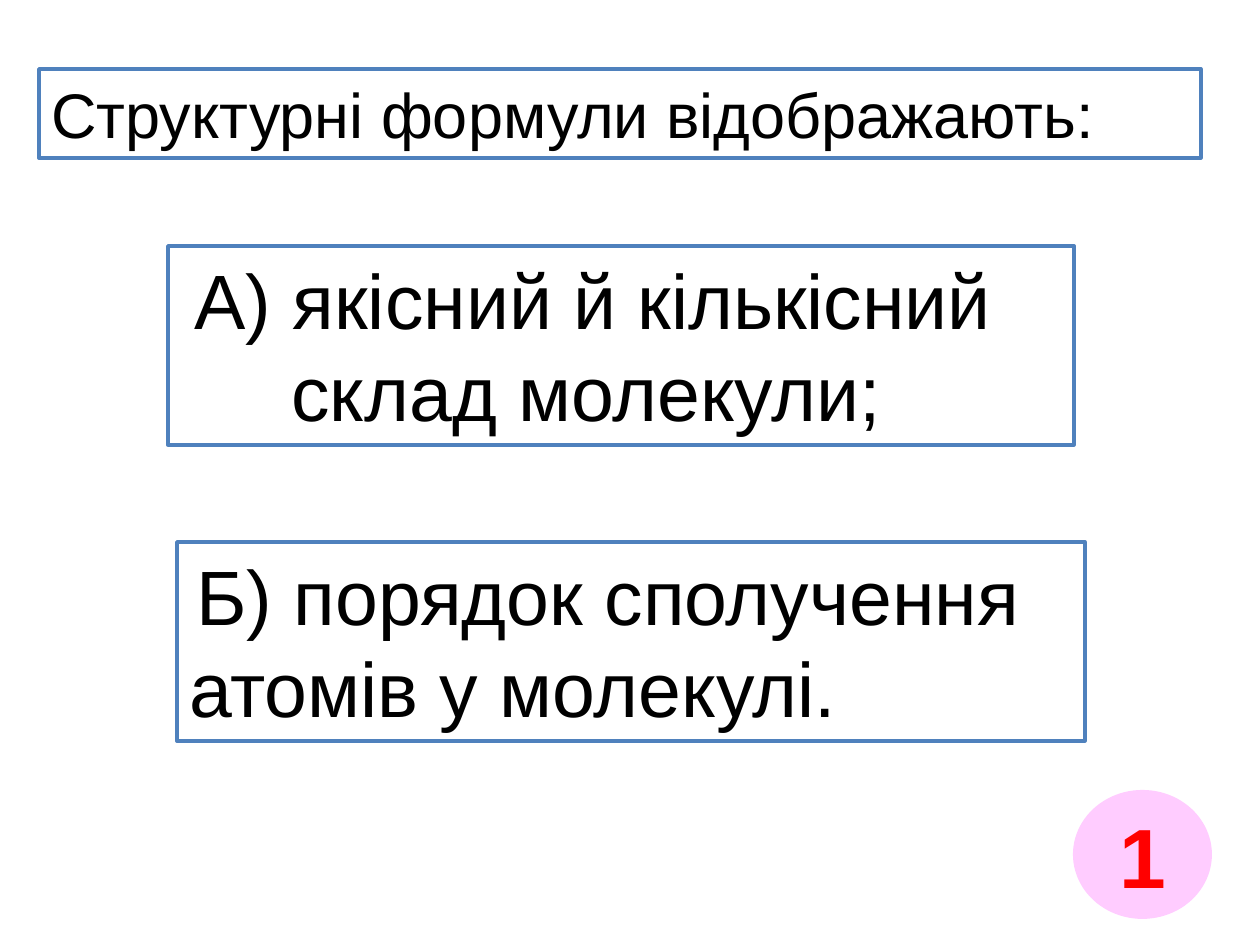
from dataclasses import dataclass

from pptx import Presentation
from pptx.dml.color import RGBColor
from pptx.enum.shapes import MSO_SHAPE
from pptx.enum.text import MSO_ANCHOR, MSO_AUTO_SIZE, PP_ALIGN
from pptx.util import Emu, Pt


@dataclass(frozen=True)
class Theme:
    font: str = "Arial"
    text: RGBColor = RGBColor(0x00, 0x00, 0x00)
    paper: RGBColor = RGBColor(0xFF, 0xFF, 0xFF)
    border: RGBColor = RGBColor(0x4F, 0x81, 0xBD)
    badge: RGBColor = RGBColor(0xFF, 0xCC, 0xFF)
    number: RGBColor = RGBColor(0xFF, 0x00, 0x00)
    title_size: int = 36
    answer_size: int = 44
    number_size: int = 48
    border_width: int = 2


T = Theme()
PX = 914400 // 126


def px(n):
    return Emu(n * PX)


def add_text_shape(kind, box, fill, text, size, color, bold=False):
    sp = s.shapes.add_shape(kind, *map(px, box))
    sp.shadow.inherit = False
    sp.fill.solid()
    sp.fill.fore_color.rgb = fill
    p = sp.text_frame.paragraphs[0]
    r = p.add_run()
    r.text = text
    r.font.name = T.font
    r.font.size = Pt(size)
    r.font.bold = bold
    r.font.color.rgb = color
    return sp


prs = Presentation()
prs.slide_width, prs.slide_height = px(1260), px(945)
s = prs.slides.add_slide(prs.slide_layouts[6])

# box, text, size, left margin, first-line indent
statements = [
    ((39, 69, 1162, 89), "Структурні формули відображають:", T.title_size, 0, 0),
    ((168, 246, 906, 199), "А) якісний й кількісний склад молекули;", T.answer_size, 111, -97),
    ((177, 542, 908, 199), "Б) порядок сполучення атомів у молекулі.", T.answer_size, 0, 7),
]
for box, text, size, margin, indent in statements:
    sp = add_text_shape(MSO_SHAPE.RECTANGLE, box, T.paper, text, size, T.text)
    sp.line.color.rgb = T.border
    sp.line.width = Pt(T.border_width)
    tf = sp.text_frame
    tf.word_wrap = True
    tf.auto_size = MSO_AUTO_SIZE.SHAPE_TO_FIT_TEXT
    tf.vertical_anchor = MSO_ANCHOR.TOP
    p = tf.paragraphs[0]
    p.alignment = PP_ALIGN.LEFT
    pPr = p._p.get_or_add_pPr()
    pPr.set("marL", str(px(margin)))
    pPr.set("indent", str(px(indent)))

badge = add_text_shape(MSO_SHAPE.OVAL, (1073, 790, 139, 129), T.badge, "1",
                       T.number_size, T.number, bold=True)
badge.line.fill.background()
tf = badge.text_frame
tf.word_wrap = False
tf.vertical_anchor = MSO_ANCHOR.MIDDLE
tf.paragraphs[0].alignment = PP_ALIGN.CENTER

prs.save("out.pptx")
